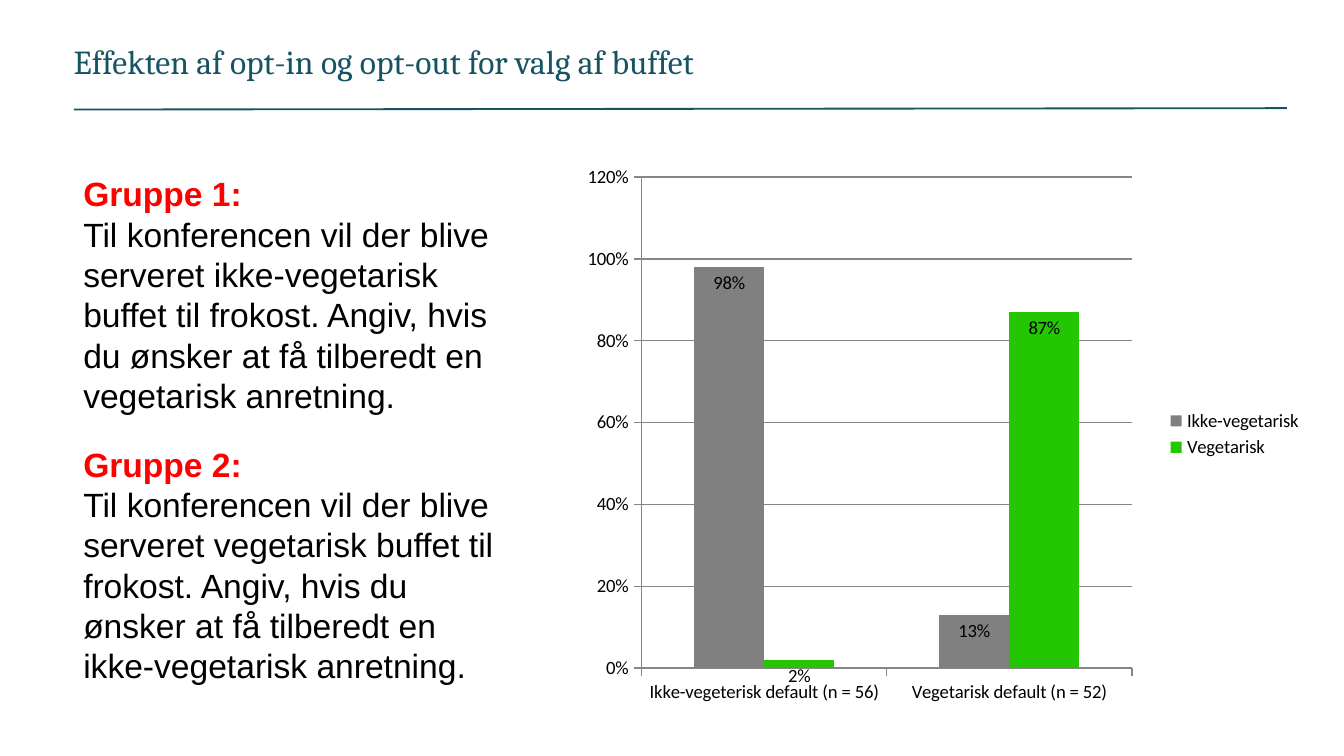
from dataclasses import dataclass

from lxml import etree
from pptx import Presentation
from pptx.chart.data import CategoryChartData
from pptx.dml.color import RGBColor
from pptx.enum.chart import XL_CHART_TYPE, XL_LABEL_POSITION, XL_LEGEND_POSITION, XL_TICK_MARK
from pptx.enum.shapes import MSO_CONNECTOR
from pptx.enum.text import MSO_AUTO_SIZE
from pptx.oxml.ns import qn
from pptx.util import Emu, Pt

COLUMNS = XL_CHART_TYPE.COLUMN_CLUSTERED
INSIDE_END = XL_LABEL_POSITION.INSIDE_END
LEGEND_RIGHT = XL_LEGEND_POSITION.RIGHT
TICK_OUTSIDE = XL_TICK_MARK.OUTSIDE
TICK_NONE = XL_TICK_MARK.NONE
STRAIGHT = MSO_CONNECTOR.STRAIGHT
GROW = MSO_AUTO_SIZE.SHAPE_TO_FIT_TEXT

EMU_PER_PX = 4572  # 200 px to the inch
TEAL, RED, BLACK, GRAY, GREEN, AXIS_GRAY = (
    "175463", "FF0000", "000000", "808080", "23C600", "868686")


@dataclass(frozen=True)
class Box:
    left: int
    top: int
    width: int
    height: int

    def emu(self) -> tuple:
        return tuple(px(n) for n in (self.left, self.top, self.width, self.height))


@dataclass(frozen=True)
class Line:
    text: str
    color: str
    font: str = "Arial"
    bold: bool = False


@dataclass(frozen=True)
class Group:
    heading: str
    body: str
    top: int


@dataclass(frozen=True)
class Series:
    name: str
    values: tuple
    color: str


GROUPS = (
    Group("Gruppe 1:", "Til konferencen vil der blive serveret ikke-vegetarisk buffet til "
          "frokost. Angiv, hvis du ønsker at få tilberedt en vegetarisk anretning.", 250),
    Group("Gruppe 2:", "Til konferencen vil der blive serveret vegetarisk buffet til "
          "frokost. Angiv, hvis du ønsker at få tilberedt en ikke-vegetarisk anretning.", 652),
)
CATEGORIES = ("Ikke-vegeterisk default (n = 56)", "Vegetarisk default (n = 52)")
SERIES = (
    Series("Ikke-vegetarisk", (0.98, 0.13), GRAY),
    Series("Vegetarisk", (0.02, 0.87), GREEN),
)
PLOT_LAYOUT = {"x": 0.12, "y": 0.05, "w": 0.64, "h": 0.86}


def px(length: int) -> Emu:
    return Emu(length * EMU_PER_PX)


def rgb(color: str) -> RGBColor:
    return RGBColor.from_string(color)


def add_text(slide, box: Box, lines: tuple, inset_x: int, inset_y: int) -> None:
    frame = slide.shapes.add_textbox(*box.emu()).text_frame
    frame.word_wrap = True
    frame.auto_size = GROW
    frame.margin_left = frame.margin_right = px(inset_x)
    frame.margin_top = frame.margin_bottom = px(inset_y)
    for index, line in enumerate(lines):
        paragraph = frame.add_paragraph() if index else frame.paragraphs[0]
        paragraph.text = line.text
        paragraph.font.size = Pt(18)
        paragraph.font.name = line.font
        paragraph.font.bold = line.bold
        paragraph.font.color.rgb = rgb(line.color)


def add_rule(slide) -> None:
    rule = slide.shapes.add_connector(STRAIGHT, px(110), px(163), px(1915), px(161))
    rule.line.color.rgb = rgb(TEAL)
    rule.line.width = Pt(1)
    etree.SubElement(rule.element.spPr, qn("a:effectLst"))


def set_plot_layout(chart) -> None:
    plot_area = chart.element.find(".//" + qn("c:plotArea"))
    for old_layout in plot_area.findall(qn("c:layout")):
        plot_area.remove(old_layout)
    layout = etree.Element(qn("c:layout"))
    plot_area.insert(0, layout)
    manual = etree.SubElement(layout, qn("c:manualLayout"))
    settings = {"layoutTarget": "inner", "xMode": "edge", "yMode": "edge", **PLOT_LAYOUT}
    for tag, value in settings.items():
        etree.SubElement(manual, qn(f"c:{tag}"), val=str(value))


def add_buffet_chart(slide, box: Box) -> None:
    data = CategoryChartData(number_format="0%")
    data.categories = CATEGORIES
    for item in SERIES:
        data.add_series(item.name, item.values)
    chart = slide.shapes.add_chart(COLUMNS, *box.emu(), data).chart
    chart.has_title = False
    chart.font.name = "Calibri"
    chart.font.size = Pt(10)
    chart.font.color.rgb = rgb(BLACK)
    chart.has_legend = True
    chart.legend.position = LEGEND_RIGHT
    chart.legend.include_in_layout = False
    set_plot_layout(chart)

    # Axes and gridlines
    for axis in (chart.category_axis, chart.value_axis):
        axis.major_tick_mark = TICK_OUTSIDE
        axis.minor_tick_mark = TICK_NONE
        axis.format.line.color.rgb = rgb(AXIS_GRAY)
    values = chart.value_axis
    values.minimum_scale, values.maximum_scale, values.major_unit = 0, 1.2, 0.2
    values.tick_labels.number_format = "0%"
    values.tick_labels.number_format_is_linked = False
    values.has_major_gridlines = True
    values.major_gridlines.format.line.color.rgb = rgb(AXIS_GRAY)

    # Columns and their labels
    plot = chart.plots[0]
    plot.gap_width = 150
    plot.overlap = 0
    plot.vary_by_categories = False
    for series, item in zip(plot.series, SERIES):
        series.format.fill.solid()
        series.format.fill.fore_color.rgb = rgb(item.color)
        labels = series.data_labels
        labels.show_value = True
        labels.position = INSIDE_END
        labels.number_format = "0%"
        labels.number_format_is_linked = False


def main() -> None:
    presentation = Presentation()
    presentation.slide_width, presentation.slide_height = px(2000), px(1125)
    slide = presentation.slides.add_slide(presentation.slide_layouts[6])

    # Heading
    add_rule(slide)
    title = Line("Effekten af opt-in og opt-out for valg af buffet", TEAL, "Cambria")
    add_text(slide, Box(90, 51, 1264, 80), (title,), 20, 10)

    # Invitation texts
    for group in GROUPS:
        lines = (Line(group.heading, RED, bold=True), Line(group.body, BLACK))
        add_text(slide, Box(110, group.top, 646, 378), lines, 14, 8)

    # Choices by default
    add_buffet_chart(slide, Box(818, 221, 1140, 850))
    presentation.save("out.pptx")


if __name__ == "__main__":
    main()
